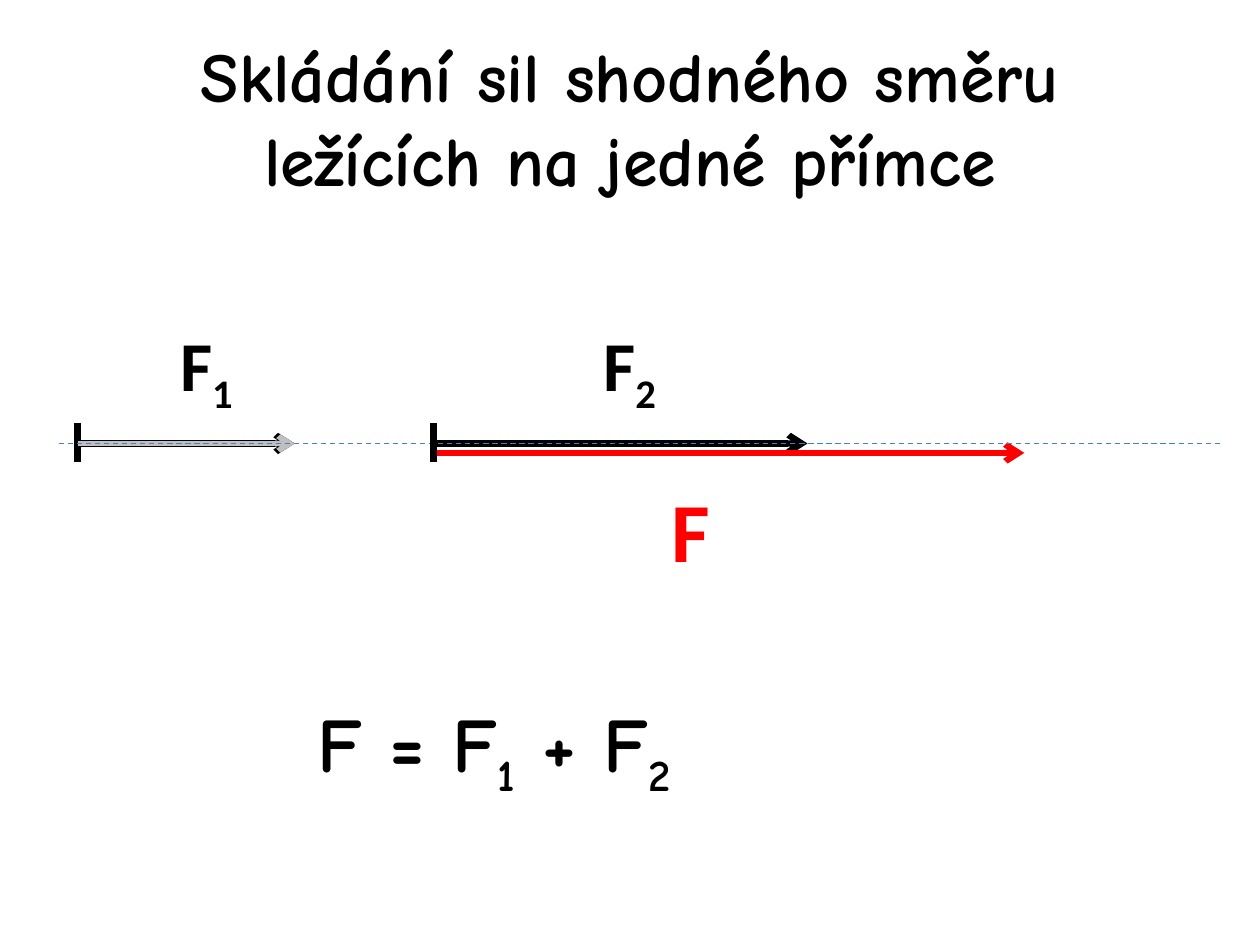
import dataclasses

import pptx
import pptx.dml.color
import pptx.enum.dml
import pptx.enum.shapes
import pptx.enum.text
import pptx.oxml.ns
import pptx.util
from lxml import etree

Cm = pptx.util.Cm
Pt = pptx.util.Pt


@dataclasses.dataclass(frozen=True)
class Theme:
    heading_font: str = "Comic Neue"
    label_font: str = "Calibri"
    ink: str = "000000"
    grey: str = "BFBFBF"
    resultant: str = "FF0000"
    axis: str = "4B7EBC"
    title_size: int = 40
    label_size: int = 40
    resultant_size: int = 48
    equation_size: int = 44
    subscript: str = "-25000"


THEME = Theme()

# Positions in centimetres
AXIS_Y = 8.94
RESULTANT_Y = 9.13
START_1, END_1 = 1.57, 5.94
START_2, END_2 = 8.74, 16.28
RESULTANT_END = 20.65
TICK_TOP, TICK_BOTTOM = 8.53, 9.32
LABEL_TOP, LABEL_HEIGHT = 6.35, 1.96


def add_line(slide, start, end, color, width, arrow=False, dashed=False):
    """Draw a straight line between two (x, y) points in centimetres."""
    line = slide.shapes.add_connector(
        pptx.enum.shapes.MSO_CONNECTOR.STRAIGHT,
        Cm(start[0]), Cm(start[1]), Cm(end[0]), Cm(end[1]))
    line.line.color.rgb = pptx.dml.color.RGBColor.from_string(color)
    line.line.width = Pt(width)
    if dashed:
        line.line.dash_style = pptx.enum.dml.MSO_LINE.DASH
    if arrow:
        tail = etree.SubElement(line.line._get_or_add_ln(),
                                pptx.oxml.ns.qn("a:tailEnd"))
        tail.set("type", "arrow")
    etree.SubElement(line._element.spPr, pptx.oxml.ns.qn("a:effectLst"))
    return line


def add_text(slide, box, parts, font, size, color):
    """Add bold text; every second part is set as a subscript."""
    shape = slide.shapes.add_textbox(*(Cm(length) for length in box))
    text_frame = shape.text_frame
    text_frame.word_wrap = True
    paragraph = text_frame.paragraphs[0]
    paragraph.text = parts[0]
    for part in parts[1:]:
        paragraph.add_run().text = part
    for run in paragraph.runs:
        run.font.name = font
        run.font.size = Pt(size)
        run.font.bold = True
        run.font.color.rgb = pptx.dml.color.RGBColor.from_string(color)
    if len(parts) > 1:
        for run in paragraph.runs[1::2]:
            run._r.get_or_add_rPr().set("baseline", THEME.subscript)
    return shape


def add_title(slide, text):
    shape = add_text(slide, (1.27, 0.76, 22.86, 3.18), [text],
                     THEME.heading_font, THEME.title_size, THEME.ink)
    shape.text_frame.vertical_anchor = pptx.enum.text.MSO_ANCHOR.MIDDLE
    shape.text_frame.paragraphs[0].alignment = pptx.enum.text.PP_ALIGN.CENTER


def add_tick(slide, x):
    add_line(slide, (x, TICK_TOP), (x, TICK_BOTTOM), THEME.ink, 4)


def add_force(slide, start, end, y, color, width=3.5):
    add_line(slide, (start, y), (end, y), color, width, arrow=True)


def add_force_label(slide, left, width, index):
    add_text(slide, (left, LABEL_TOP, width, LABEL_HEIGHT), ["F", index],
             THEME.label_font, THEME.label_size, THEME.ink)


def main():
    presentation = pptx.Presentation()
    presentation.slide_width = Cm(25.4)
    presentation.slide_height = Cm(19.05)
    slide = presentation.slides.add_slide(presentation.slide_layouts[6])

    add_title(slide, "Skládání sil shodného směru\nležících na jedné přímce")

    # Forces and their resultant
    add_force(slide, START_1, END_1, AXIS_Y, THEME.ink)
    add_force(slide, START_2, END_2, AXIS_Y, THEME.ink)
    add_tick(slide, START_1)
    add_force(slide, START_1, END_1, AXIS_Y, THEME.grey, width=3)
    add_force(slide, START_2, RESULTANT_END, RESULTANT_Y, THEME.resultant)

    # Force labels
    add_force_label(slide, 3.38, 1.78, "1")
    add_force_label(slide, 11.91, 1.98, "2")
    add_text(slide, (13.28, 9.53, 1.6, 2.31), ["F"],
             THEME.label_font, THEME.resultant_size, THEME.resultant)

    # Common line of action
    add_line(slide, (1.19, AXIS_Y), (24.61, AXIS_Y), THEME.axis, 0.75,
             dashed=True)
    add_tick(slide, START_2)

    # Equation
    add_text(slide, (6.15, 13.89, 11.13, 2.13), ["F = F", "1", " + F", "2"],
             THEME.heading_font, THEME.equation_size, THEME.ink)

    presentation.save("out.pptx")


if __name__ == "__main__":
    main()
